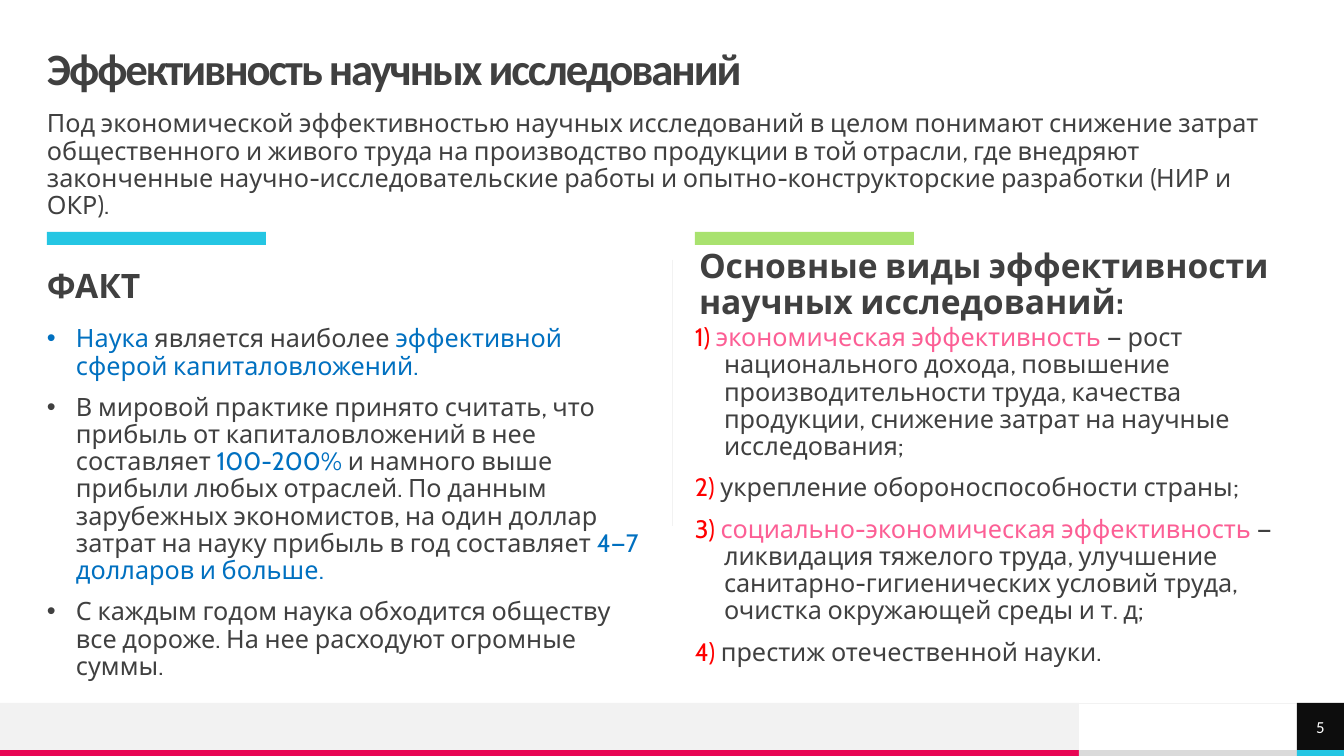
from lxml.etree import SubElement
from pptx import Presentation
from pptx.dml.color import RGBColor
from pptx.enum.shapes import MSO_CONNECTOR, MSO_SHAPE
from pptx.enum.text import MSO_ANCHOR, MSO_AUTO_SIZE, PP_ALIGN
from pptx.oxml.ns import qn
from pptx.util import Emu, Pt

PX = 914400 / 100.8
WIDTH, HEIGHT = 1344, 756
COLORS = {
    "text": "404040", "cyan": "25C6E3", "green": "A9E26F", "magenta": "E80554",
    "pale": "F2F2F2", "grey": "DADADA", "black": "0D0D0D", "white": "FFFFFF",
    "blue": "0070C0", "red": "FF0000", "pink": "FC5F95",
}

TITLE = "Эффективность научных исследований"
INTRO = (
    "Под экономической эффективностью научных исследований в целом понимают "
    "снижение затрат общественного и живого труда на производство продукции в "
    "той отрасли, где внедряют законченные научно-исследовательские работы и "
    "опытно-конструкторские разработки (НИР и ОКР)."
)
FACTS = [
    [("Наука", "blue"), (" является наиболее ", "text"),
     ("эффективной сферой капиталовложений.", "blue")],
    [("В мировой практике принято считать, что прибыль от капиталовложений в "
      "нее составляет ", "text"), ("100-200% ", "blue"),
     ("и намного выше прибыли любых отраслей. По данным зарубежных "
      "экономистов, на один доллар затрат на науку прибыль в год составляет ",
      "text"), ("4—7 долларов и больше.", "blue")],
    [("С каждым годом наука обходится обществу все дороже. На нее расходуют "
      "огромные суммы.", "text")],
]
KINDS = [
    [("1) ", "red"), ("экономическая эффективность ", "pink"),
     ("— рост национального дохода, повышение производительности труда, "
      "качества продукции, снижение затрат на научные исследования;", "text")],
    [("2) ", "red"), ("укрепление обороноспособности страны;", "text")],
    [("3) ", "red"), ("социально-экономическая эффективность ", "pink"),
     ("— ликвидация тяжелого труда, улучшение санитарно-гигиенических условий "
      "труда, очистка окружающей среды и т. д;", "text")],
    [("4) ", "red"), ("престиж отечественной науки.", "text")],
]


def px(length):
    """Turn pixels into EMU."""
    return Emu(round(length * PX))


def rgb(name):
    """Look up a palette colour."""
    return RGBColor.from_string(COLORS[name])


def style(font, size, color, family="Cabin", bold=False):
    """Format a font."""
    font.size, font.name, font.bold = Pt(size), family, bold
    font.color.rgb = rgb(color)


def set_frame(frame, anchor=MSO_ANCHOR.TOP):
    """Remove the margins of a text frame and wrap its text."""
    frame.margin_left = frame.margin_top = 0
    frame.margin_right = frame.margin_bottom = 0
    frame.word_wrap, frame.vertical_anchor = True, anchor
    frame.auto_size = MSO_AUTO_SIZE.NONE


def add_block(slide, left, top, width, height, color):
    """Add a plain filled rectangle."""
    block = slide.shapes.add_shape(
        MSO_SHAPE.RECTANGLE, px(left), px(top), px(width), px(height))
    block.shadow.inherit = False
    block.fill.solid()
    block.fill.fore_color.rgb = rgb(color)
    block.line.fill.background()
    return block


def add_rule(slide, *ends):
    """Add a thin pale line."""
    rule = slide.shapes.add_connector(MSO_CONNECTOR.STRAIGHT, *map(px, ends))
    rule.line.color.rgb = rgb("pale")
    rule.line.width = Pt(0.5)
    SubElement(rule._element.spPr, qn("a:effectLst"))


def add_text(slide, left, top, width, height, paragraphs, size=18, bold=False,
             indent=0, bullet=None):
    """Add paragraphs of coloured runs."""
    box = slide.shapes.add_textbox(px(left), px(top), px(width), px(height))
    frame = box.text_frame
    set_frame(frame)
    for index, pieces in enumerate(paragraphs):
        paragraph = frame.add_paragraph() if index else frame.paragraphs[0]
        paragraph.line_spacing = 0.9
        paragraph.space_before = Pt(10 if index else 0)
        properties = paragraph._p.get_or_add_pPr()
        properties.set("marL", str(px(indent)))
        properties.set("indent", str(px(-indent)))
        if bullet:
            SubElement(properties, qn("a:buFont")).set("typeface", "Arial")
            SubElement(properties, qn("a:buChar")).set("char", bullet)
        for words, color in pieces:
            run = paragraph.add_run()
            run.text = words
            style(run.font, size, color, bold=bold)


def add_header(slide, left, top, width):
    """Place the title and the introduction under it."""
    title = slide.shapes.title
    title.left, title.top = px(left), px(top)
    title.width, title.height = px(width), px(47)
    title.text_frame.text = TITLE
    set_frame(title.text_frame, MSO_ANCHOR.MIDDLE)
    paragraph = title.text_frame.paragraphs[0]
    paragraph.alignment, paragraph.line_spacing = PP_ALIGN.LEFT, 0.9
    run = paragraph.runs[0]
    style(run.font, 32, "text", "Calibri", True)
    run._r.get_or_add_rPr().set("spc", "-150")
    add_text(slide, left, top + 64, width, 91, [[(INTRO, "text")]])


def add_column(slide, left, top, width, accent, heading, heading_offset,
               items, items_top, bullet=None):
    """Place an accent bar, a heading and a list in one column."""
    add_block(slide, left, top, 219, 13, accent)
    shift, drop = heading_offset
    add_text(slide, left + shift, top + drop, width, 69,
             [[(heading, "text")]], 24, True)
    add_text(slide, left, top + items_top, width, 383, items,
             indent=29, bullet=bullet)


def add_footer(slide, top, number):
    """Place the footer band, its colour strip and the page number."""
    band, page, strip_top = 1079, 47, top + 47
    page_left = WIDTH - page
    add_block(slide, 0, top, band, 47, "pale")
    for left, right, color in ((0, band, "magenta"), (band, page_left, "grey"),
                               (page_left, WIDTH, "cyan")):
        add_block(slide, left, strip_top, right - left, 6, color)
    add_rule(slide, 0, top, WIDTH, top)
    page_box = add_block(slide, page_left, top, page, 47, "black")
    set_frame(page_box.text_frame, MSO_ANCHOR.MIDDLE)
    page_box.text_frame.text = number
    paragraph = page_box.text_frame.paragraphs[0]
    paragraph.alignment = PP_ALIGN.CENTER
    style(paragraph.runs[0].font, 12, "white", "Calibri")


def main():
    """Build and save the slide."""
    deck = Presentation()
    deck.slide_width, deck.slide_height = px(WIDTH), px(HEIGHT)
    slide = deck.slides.add_slide(deck.slide_layouts[5])
    add_footer(slide, 703, "5")
    add_header(slide, 47, 47, 1250)
    add_column(slide, 47, 232, 603, "cyan", "ФАКТ", (0, 37), FACTS, 94, "•")
    add_rule(slide, 672, 260, 672, 526)
    add_column(slide, 695, 232, 603, "green",
               "Основные виды эффективности научных исследований:", (4, 17),
               KINDS, 93)
    deck.save("out.pptx")


if __name__ == "__main__":
    main()
